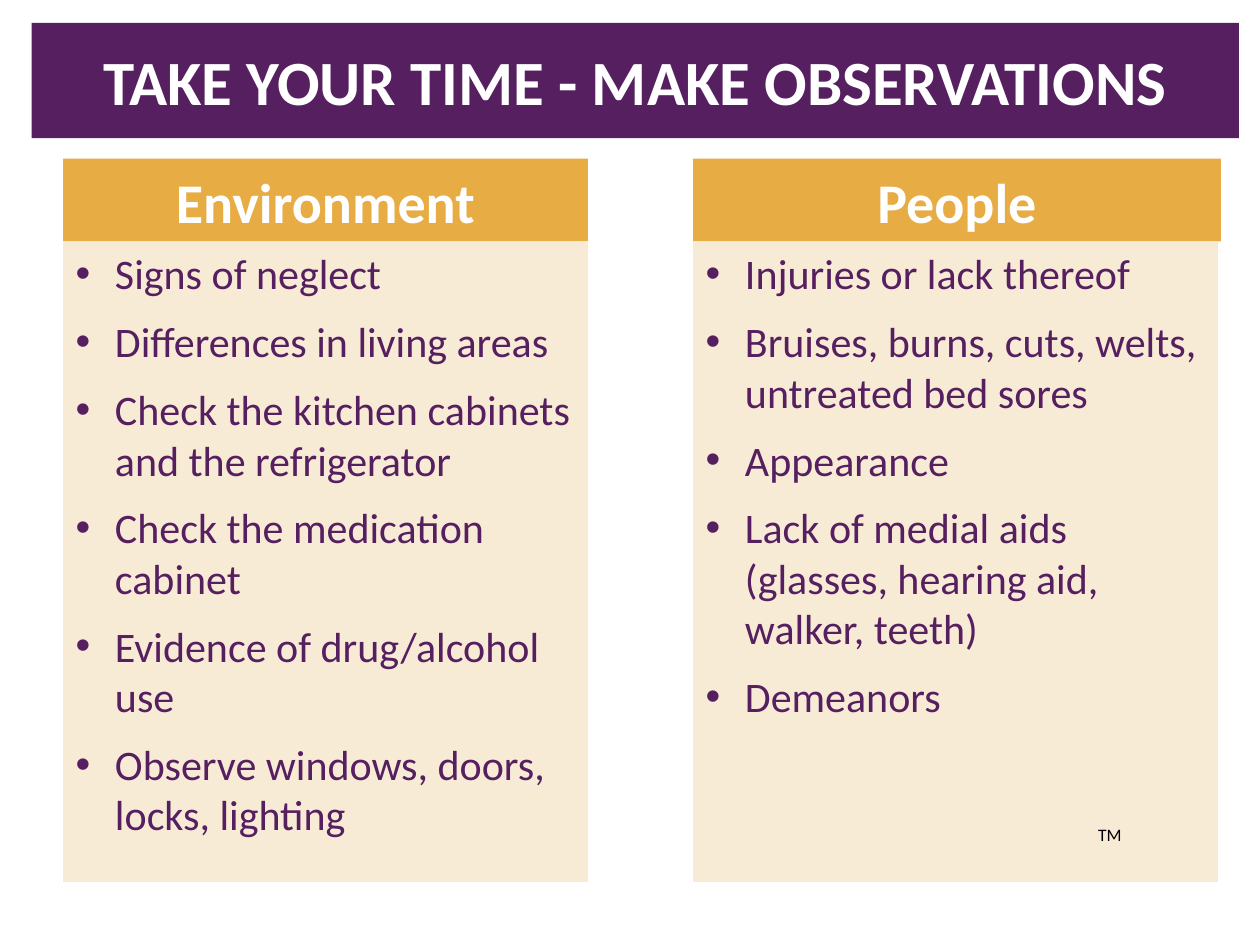
from lxml.etree import SubElement
from pptx import Presentation
from pptx.dml.color import RGBColor
from pptx.enum.text import MSO_ANCHOR, MSO_AUTO_SIZE, PP_ALIGN
from pptx.oxml.ns import qn
from pptx.util import Pt

PURPLE = RGBColor(0x56, 0x1F, 0x60)
GOLD = RGBColor(0xE7, 0xAC, 0x43)
CREAM = RGBColor(0xF8, 0xEB, 0xD6)
WHITE = RGBColor(0xFF, 0xFF, 0xFF)
BLACK = RGBColor(0x00, 0x00, 0x00)

FONT = "Calibri"
HEADING_HEIGHT = 47.3
INDENT = 22.5

ENVIRONMENT = [
    "Signs of neglect",
    "Differences in living areas",
    "Check the kitchen cabinets and the refrigerator",
    "Check the medication cabinet",
    "Evidence of drug/alcohol use",
    "Observe windows, doors, locks, lighting",
]
PEOPLE = [
    "Injuries or lack thereof",
    "Bruises, burns, cuts, welts, untreated bed sores",
    "Appearance",
    "Lack of medial aids (glasses, hearing aid, walker, teeth)",
    "Demeanors",
]


def place(shape, left, top, width, height, fill=None):
    """Move a shape to a box in points and fill it."""
    shape.left, shape.top = Pt(left), Pt(top)
    shape.width, shape.height = Pt(width), Pt(height)
    if fill is not None:
        shape.fill.solid()
        shape.fill.fore_color.rgb = fill


def add_bullet(paragraph, color):
    """Give a paragraph a hanging round bullet."""
    properties = paragraph._p.get_or_add_pPr()
    properties.set("marL", str(Pt(INDENT)))
    properties.set("indent", str(-Pt(INDENT)))
    bullet_color = SubElement(properties, qn("a:buClr"))
    SubElement(bullet_color, qn("a:srgbClr"), val=str(color))
    SubElement(properties, qn("a:buFont"), typeface="Arial")
    SubElement(properties, qn("a:buChar"), char="•")


def write_text(shape, lines, size, color, bold=False, align=PP_ALIGN.LEFT,
               anchor=MSO_ANCHOR.TOP, space_after=0, bullets=False):
    """Write one paragraph per line in a shape."""
    frame = shape.text_frame
    frame.word_wrap = True
    frame.auto_size = MSO_AUTO_SIZE.NONE
    frame.vertical_anchor = anchor
    frame.text = "\n".join(lines)
    for paragraph in frame.paragraphs:
        paragraph.alignment = align
        paragraph.line_spacing = 1.0
        paragraph.space_before = Pt(0)
        paragraph.space_after = Pt(space_after)
        if bullets:
            add_bullet(paragraph, color)
        font = paragraph.font
        font.name, font.size, font.bold = FONT, Pt(size), bold
        font.color.rgb = color


def build_title(shape, left, top, width, height):
    """Fill the title bar."""
    place(shape, left, top, width, height, PURPLE)
    write_text(shape, ["TAKE YOUR TIME - MAKE OBSERVATIONS"], 36, WHITE,
               bold=True, align=PP_ALIGN.CENTER, anchor=MSO_ANCHOR.MIDDLE)


def build_column(heading, body, title, items, left, top, width, height,
                 heading_width):
    """Stack a heading band above a bulleted panel."""
    place(heading, left, top, heading_width, HEADING_HEIGHT, GOLD)
    write_text(heading, [title], 32, WHITE, bold=True, align=PP_ALIGN.CENTER,
               anchor=MSO_ANCHOR.BOTTOM, space_after=10)
    place(body, left, top + HEADING_HEIGHT, width, height - HEADING_HEIGHT, CREAM)
    write_text(body, items, 24, PURPLE, space_after=10, bullets=True)


def build_trademark(slide, left, top, width, height):
    """Add the small trademark label."""
    label = slide.shapes.add_textbox(Pt(left), Pt(top), Pt(width), Pt(height))
    write_text(label, ["TM"], 10, BLACK, align=PP_ALIGN.RIGHT,
               anchor=MSO_ANCHOR.MIDDLE)


def main():
    """Build the slide and save it."""
    presentation = Presentation()
    presentation.slide_width, presentation.slide_height = Pt(720), Pt(540)
    slide = presentation.slides.add_slide(presentation.slide_layouts[4])
    title, *parts = slide.placeholders
    build_title(title, 18, 13, 690, 66)
    build_column(*parts[:2], "Environment", ENVIRONMENT, 36, 90.7, 300, 413.3, 300)
    build_column(*parts[2:], "People", PEOPLE, 396, 90.7, 300, 413.3, 301.7)
    build_trademark(slide, 615, 462, 33, 29.5)
    presentation.save("out.pptx")


if __name__ == "__main__":
    main()
